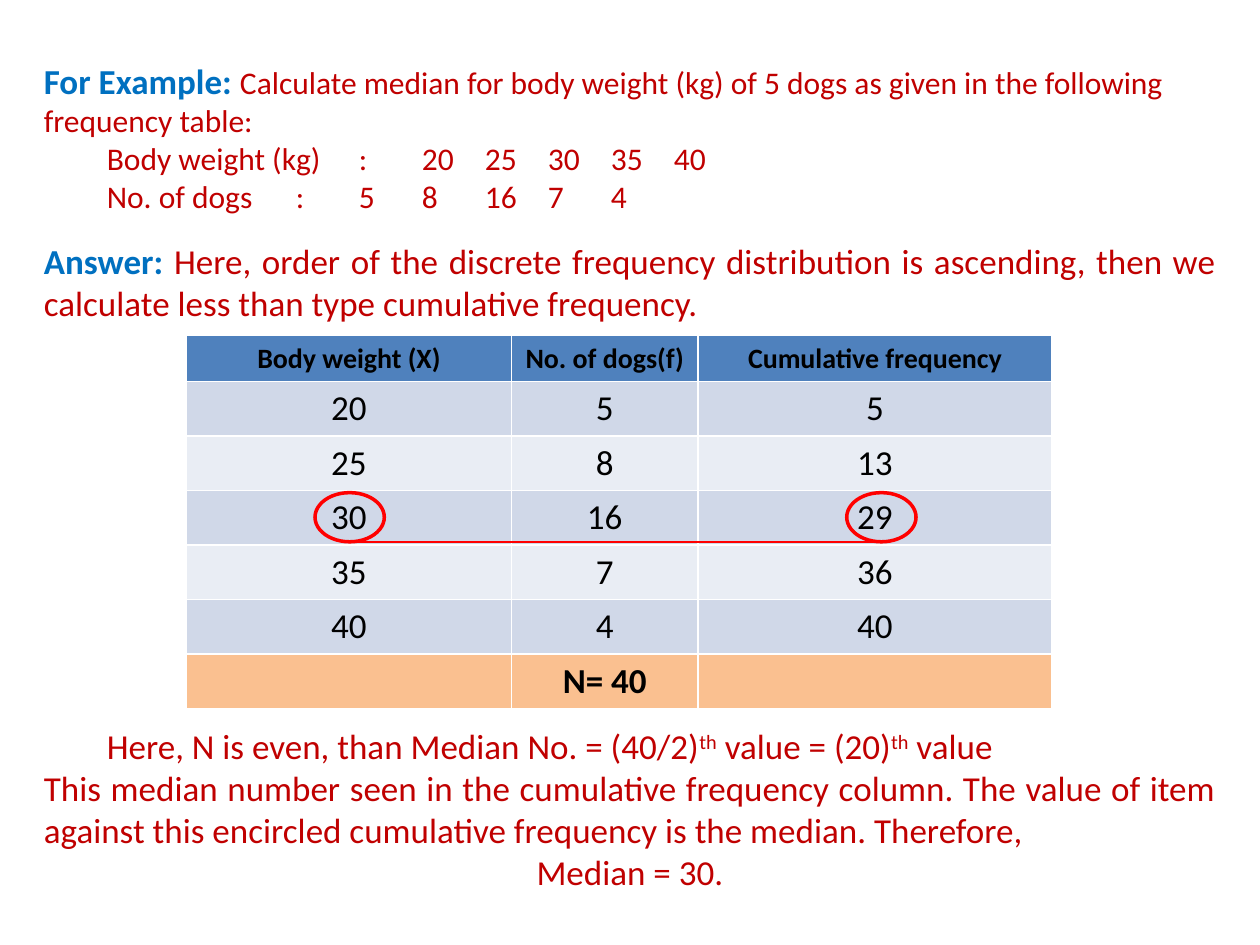
"""Build a slide that finds the median of a discrete frequency distribution."""
from lxml.etree import SubElement
from pptx import Presentation
from pptx.dml.color import RGBColor
from pptx.enum.shapes import MSO_CONNECTOR, MSO_SHAPE
from pptx.enum.text import MSO_ANCHOR, PP_ALIGN
from pptx.oxml.ns import qn
from pptx.util import Inches, Pt


def color(value):
    return RGBColor.from_string(value)


def write(paragraph, text, form):
    run = paragraph.add_run()
    run.text = text
    values = {"name": "Calibri", "size": Pt(form["size"]), "bold": form.get("bold", False)}
    for name, value in values.items():
        setattr(run.font, name, value)
    run.font.color.rgb = color(form["color"])
    if "baseline" in form:
        run._r.get_or_add_rPr().set("baseline", form["baseline"])


presentation = Presentation()
presentation.slide_width, presentation.slide_height = Inches(10), Inches(7.5)
column, row = presentation.slide_width / 40, presentation.slide_height / 30
slide = presentation.slides.add_slide(presentation.slide_layouts[6])

label = {"size": 20, "color": "0070C0", "bold": True}
question = {"size": 18, "color": "C00000"}
answer = {"size": 20, "color": "C00000"}
raised = {**answer, "baseline": "30000"}
weights = [20, 25, 30, 35, 40]
dogs = [5, 8, 16, 7, 4]
cumulative = [sum(dogs[:count]) for count in range(1, 6)]

paragraphs = [
    (PP_ALIGN.LEFT, 0, [
        ("For Example: ", label),
        ("Calculate median for body weight (kg) of 5 dogs as given in the following frequency table:", question)]),
    (PP_ALIGN.LEFT, 0, [("\t".join(["", "Body weight (kg)", ":", *map(str, weights)]), question)]),
    (PP_ALIGN.LEFT, 0, [("\t".join(["", "No. of dogs", ":", *map(str, dogs)]), question)]),
    (PP_ALIGN.JUSTIFY, 14.5, [
        ("Answer: ", label),
        ("Here, order of the discrete frequency distribution is ascending, then we calculate "
         "less than type cumulative frequency.", answer)]),
    (PP_ALIGN.JUSTIFY, 229, [
        ("\tHere, N is even, than Median No. = (40/2)", answer), ("th", raised),
        (" value = (20)", answer), ("th", raised), (" value", answer)]),
    (PP_ALIGN.JUSTIFY, 0, [
        ("This median number seen in the cumulative frequency column. The value of item against "
         "this encircled cumulative frequency is the median. Therefore,", answer)]),
    (PP_ALIGN.CENTER, 0, [("Median = 30.", answer)]),
]
text_box = slide.shapes.add_textbox(int(column), int(1.68 * row), int(38 * column), int(27.4 * row))
text_frame = text_box.text_frame
text_frame.word_wrap = True
for index, (alignment, gap, runs) in enumerate(paragraphs):
    paragraph = text_frame.add_paragraph() if index else text_frame.paragraphs[0]
    paragraph.alignment = alignment
    paragraph.space_before = Pt(gap)
    for text, form in runs:
        write(paragraph, text, form)

heading = {"size": 16, "color": "000000", "bold": True}
body = {"size": 20, "color": "000000"}
total = {**body, "bold": True}
table_rows = [(["Body weight (X)", "No. of dogs(f)", "Cumulative frequency"], "4F81BD", heading)]
for index, values in enumerate(zip(weights, dogs, cumulative)):
    table_rows.append((values, ["D0D8E8", "E9EDF4"][index % 2], body))
table_rows.append((["", f"N= {sum(dogs)}", ""], "FAC090", total))

table = slide.shapes.add_table(
    len(table_rows), 3, int(5.92 * column), int(10.64 * row), int(27.5 * column), int(11.88 * row)).table
for table_column, width in zip(table.columns, [10.32, 5.92, 11.24]):
    table_column.width = int(width * column)
cell_format = {"margin_top": 0, "margin_bottom": 0, "vertical_anchor": MSO_ANCHOR.MIDDLE}
for row_index, (values, fill, form) in enumerate(table_rows):
    table.rows[row_index].height = int((1.73 if row_index else 1.48) * row)
    for column_index, value in enumerate(values):
        cell = table.cell(row_index, column_index)
        for name, setting in cell_format.items():
            setattr(cell, name, setting)
        cell.fill.solid()
        cell.fill.fore_color.rgb = color(fill)
        if value != "":
            paragraph = cell.text_frame.paragraphs[0]
            paragraph.alignment = PP_ALIGN.CENTER
            write(paragraph, str(value), form)

for left in [26.88, 10]:
    ellipse = slide.shapes.add_shape(
        MSO_SHAPE.OVAL, int(left * column), int(15.64 * row), int(2.2 * column), int(1.56 * row))
    ellipse.shadow.inherit = False
    ellipse.fill.background()
    ellipse.line.color.rgb = color("FF0000")
    ellipse.line.width = Pt(2)

connector = slide.shapes.add_connector(
    MSO_CONNECTOR.STRAIGHT, int(11.1 * column), int(17.2 * row), int(27.98 * column), int(17.2 * row))
connector.line.color.rgb = color("FF0000")
connector.line.width = Pt(1)
SubElement(connector._element.spPr, qn("a:effectLst"))

presentation.save("out.pptx")
